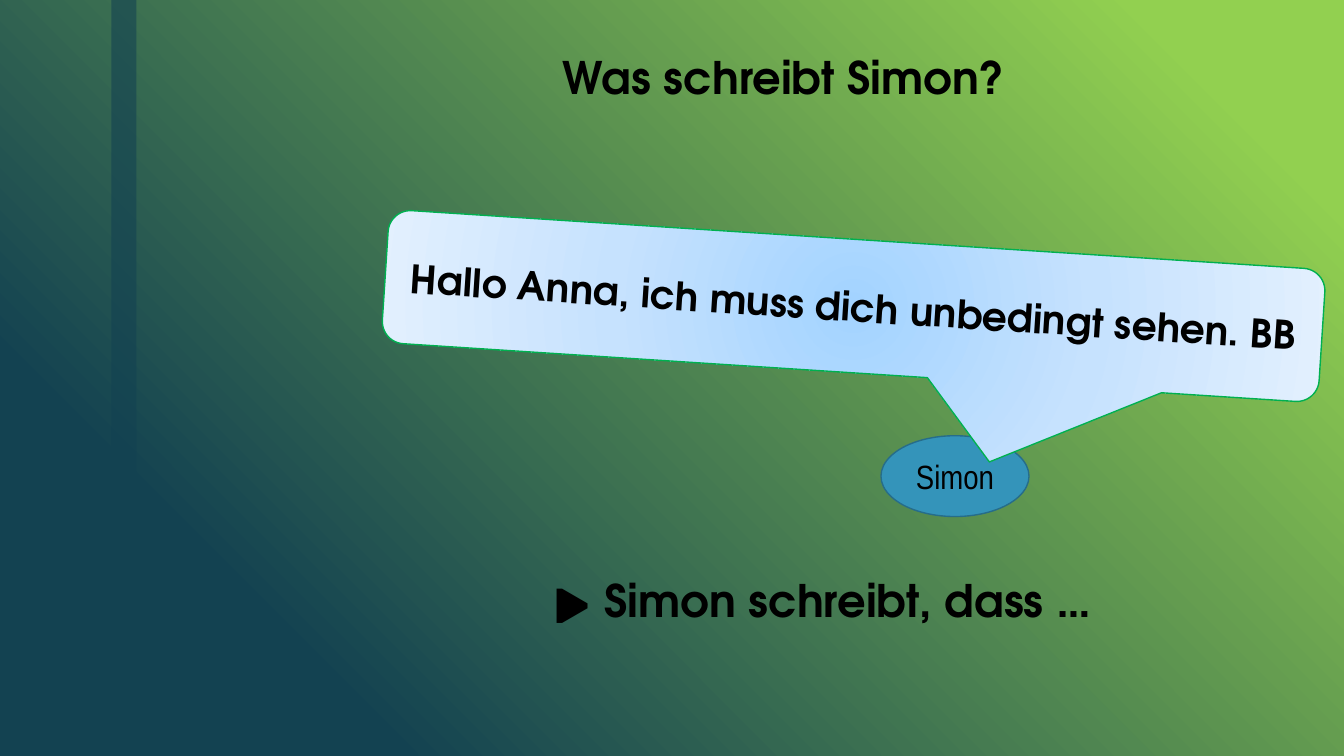
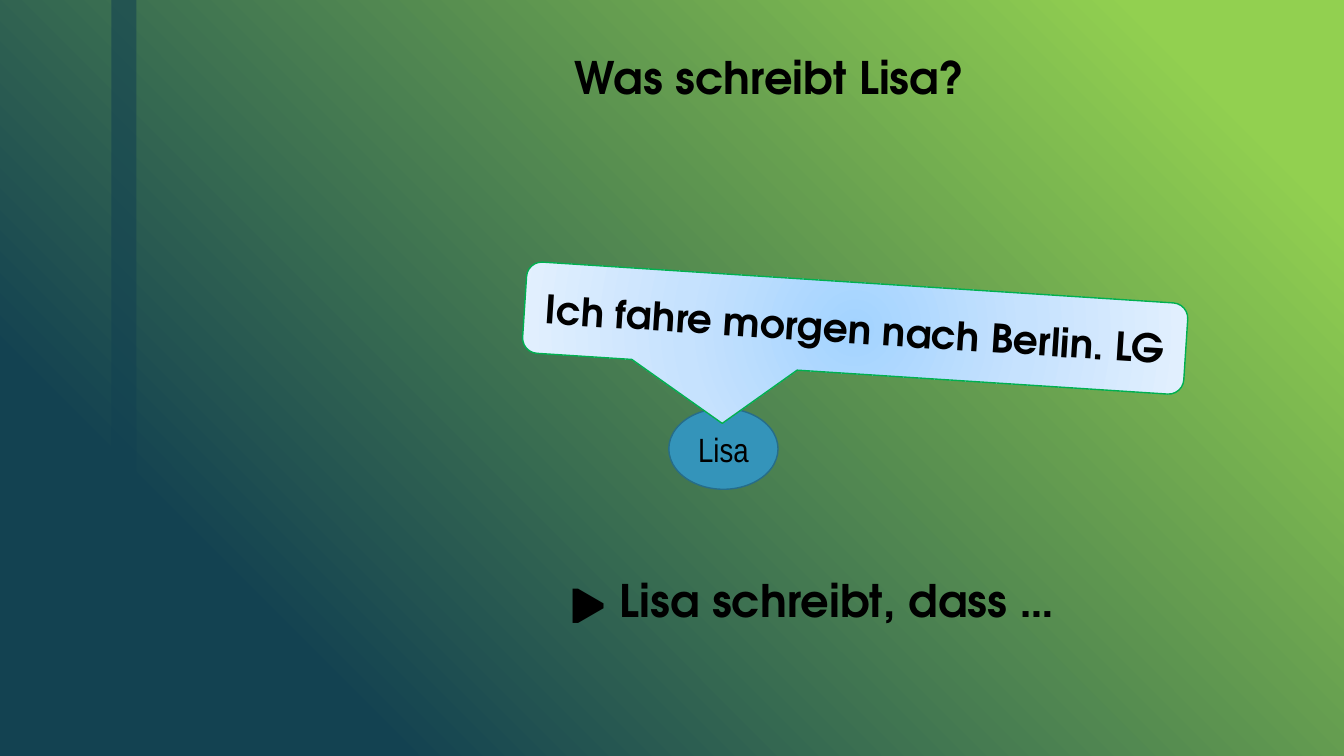
from lxml.etree import SubElement
from pptx import Presentation
from pptx.dml.color import RGBColor
from pptx.enum.shapes import MSO_SHAPE
from pptx.enum.text import MSO_ANCHOR, MSO_AUTO_SIZE, PP_ALIGN
from pptx.oxml.ns import qn
from pptx.util import Emu, Pt

# Shared style: 96 px to the inch
EMU_PER_PX = 9525
SLIDE_WIDTH, SLIDE_HEIGHT = 1280, 720
HEADING_FONT, NAME_FONT = "TeX Gyre Adventor", "Arial Narrow"
BLACK, NAVY, LIME = "000000", "134251", "92D050"
BLUE, DARK_BLUE, GREEN = "3494BA", "266D8A", "00B050"
BACKGROUND_STOPS = [(10, LIME), (81, NAVY), (100, NAVY)]
BUBBLE_STOPS = [(0, "A3D3FF"), (50, "C6E2FE"), (100, "E3F0FE")]

# One entry per slide; boxes are left, top, width, height
SCENES = [
    {
        "name": "Simon",
        "message": "Hallo Anna, ich muss dich unbedingt sehen. BB",
        "title_box": (523, 43, 447, 61),
        "prompt_box": (400, 541, 767, 61),
        "name_box": (839, 415, 141, 77),
        "bubble_box": (366, 228, 894, 127),
        "pointer": (0.155, 1.101),
    },
    {
        "name": "Lisa",
        "message": "Ich fahre morgen nach Berlin. LG",
        "title_box": (496, 43, 474, 61),
        "prompt_box": (390, 541, 767, 61),
        "name_box": (637, 389, 104, 77),
        "bubble_box": (499, 269, 631, 87),
        "pointer": (-0.191, 1.135),
    },
]


def px(value):
    return Emu(value * EMU_PER_PX)


def color(hex_value):
    return RGBColor.from_string(hex_value)


def set_gradient(properties, stops, angle=None):
    """Replace a solid fill by a linear gradient, or a centred one without angle."""
    solid = properties.find(qn("a:solidFill"))
    gradient = properties.makeelement(qn("a:gradFill"), {"rotWithShape": "1"})
    stop_list = SubElement(gradient, qn("a:gsLst"))
    for position, hex_value in stops:
        stop = SubElement(stop_list, qn("a:gs"), pos=str(position * 1000))
        SubElement(stop, qn("a:srgbClr"), val=hex_value)
    if angle is None:
        shade = SubElement(gradient, qn("a:path"), path="circle")
        center = dict.fromkeys("ltrb", "50000")
        SubElement(shade, qn("a:fillToRect"), center)
    else:
        SubElement(gradient, qn("a:lin"), ang=str(angle * 60000), scaled="0")
    properties.replace(solid, gradient)


def write(text_frame, text, font_name, size, bold=False):
    text_frame.word_wrap = True
    text_frame.text = text
    paragraph = text_frame.paragraphs[0]
    paragraph.alignment = PP_ALIGN.CENTER
    font = paragraph.runs[0].font
    font.name, font.size, font.bold = font_name, Pt(size), bold
    font.color.rgb = color(BLACK)


def add_shape(slide, kind, box, fill, line=None):
    shape = slide.shapes.add_shape(kind, *map(px, box))
    shape.shadow.inherit = False
    shape.fill.solid()
    shape.fill.fore_color.rgb = color(fill)
    if line:
        shape.line.color.rgb = color(line)
        shape.line.width = Pt(1)
    else:
        shape.line.fill.background()
    shape.text_frame.vertical_anchor = MSO_ANCHOR.MIDDLE
    return shape


def add_heading(slide, box, text):
    text_frame = slide.shapes.add_textbox(*map(px, box)).text_frame
    write(text_frame, text, HEADING_FONT, 32, bold=True)
    text_frame.auto_size = MSO_AUTO_SIZE.SHAPE_TO_FIT_TEXT


def add_name(slide, box, name):
    oval = add_shape(slide, MSO_SHAPE.OVAL, box, BLUE, DARK_BLUE)
    text_frame = oval.text_frame
    text_frame.margin_left = text_frame.margin_right = 0
    write(text_frame, name, NAME_FONT, 24)


def add_bubble(slide, box, pointer, message):
    bubble = add_shape(slide, MSO_SHAPE.ROUNDED_RECTANGULAR_CALLOUT, box, BLUE, GREEN)
    set_gradient(bubble.element.spPr, BUBBLE_STOPS)
    bubble.adjustments[0], bubble.adjustments[1] = pointer
    bubble.adjustments[2] = 0.167
    bubble.rotation = 3.7
    write(bubble.text_frame, message, HEADING_FONT, 28, bold=True)


def add_slide(presentation):
    """Blank slide with the gradient background and the vertical band."""
    slide = presentation.slides.add_slide(presentation.slide_layouts[6])
    slide.background.fill.solid()
    set_gradient(next(slide.element.iter(qn("p:bgPr"))), BACKGROUND_STOPS, angle=135)
    band = add_shape(slide, MSO_SHAPE.RECTANGLE, (106, 0, 24, SLIDE_HEIGHT), NAVY)
    band_color = band.element.spPr.find(qn("a:solidFill"))[0]
    SubElement(band_color, qn("a:alpha"), val="60000")
    return slide


def build_scene(presentation, scene):
    slide = add_slide(presentation)
    name = scene["name"]
    add_heading(slide, scene["title_box"], f"Was schreibt {name}?")
    add_heading(slide, scene["prompt_box"], f"▶ {name} schreibt, dass …")
    add_name(slide, scene["name_box"], name)
    add_bubble(slide, scene["bubble_box"], scene["pointer"], scene["message"])


def main():
    presentation = Presentation()
    presentation.slide_width = px(SLIDE_WIDTH)
    presentation.slide_height = px(SLIDE_HEIGHT)
    for scene in SCENES:
        build_scene(presentation, scene)
    presentation.save("out.pptx")


if __name__ == "__main__":
    main()
